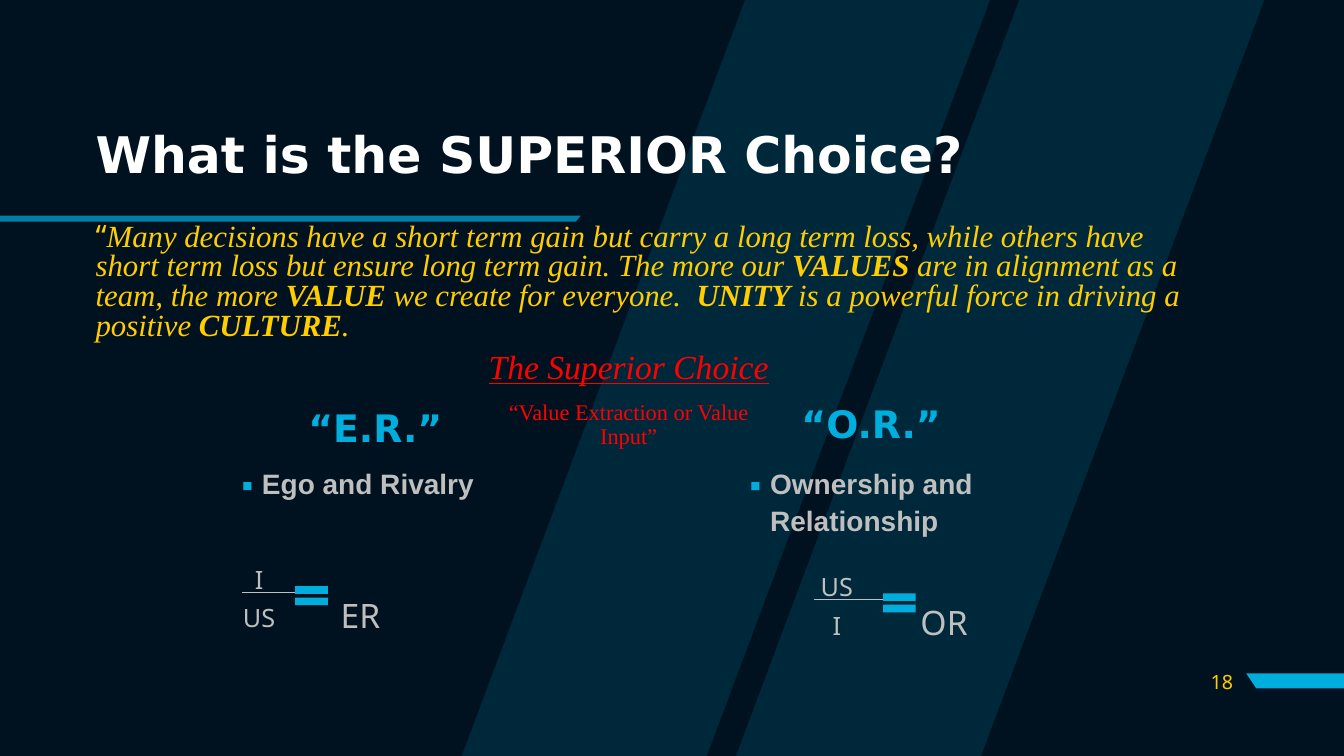
from lxml import etree
from pptx import Presentation
from pptx import util as u
from pptx.dml.color import RGBColor
from pptx.enum import shapes, text
from pptx.oxml.ns import qn

CYAN, GOLD, GREY, RED, WHITE, NAVY = "00AEDE", "FFCD00", "BFBFBF", "FF0000", "FFFFFF", "00111F"
HEAD, BODY, SERIF, SANS = "DejaVu Sans", "Noto Sans", "Times New Roman", "Arial"
LEFT, CENTER, RIGHT = text.PP_ALIGN.LEFT, text.PP_ALIGN.CENTER, text.PP_ALIGN.RIGHT


def rgb(color):
    return RGBColor.from_string(color)


def paint(sp, color, alpha=100):
    sp.shadow.inherit = False
    sp.line.fill.background()
    sp.fill.solid()
    sp.fill.fore_color.rgb = rgb(color)
    if alpha < 100:
        clr = sp.fill._xPr.find(".//" + qn("a:srgbClr"))
        etree.SubElement(clr, qn("a:alpha"), val=str(alpha * 1000))


def add_outline(slide, polygons, color, alpha=100):
    """Draw one freeform made of closed polygons, points in inches."""
    outlines = [[(u.Inches(x), u.Inches(y)) for x, y in points] for points in polygons]
    builder = slide.shapes.build_freeform(*outlines[0][0])
    for i, points in enumerate(outlines):
        if i:
            builder.move_to(*points[0])
        builder.add_line_segments(points[1:], close=True)
    paint(builder.convert_to_shape(), color, alpha)


def add_bullet(p, char, color, indent):
    pPr = p._p.get_or_add_pPr()
    pPr.set("marL", str(u.Inches(indent)))
    pPr.set("indent", str(-u.Inches(indent)))
    clr = etree.SubElement(pPr, qn("a:buClr"))
    etree.SubElement(clr, qn("a:srgbClr"), val=color)
    etree.SubElement(pPr, qn("a:buFont"), typeface=BODY)
    etree.SubElement(pPr, qn("a:buChar"), char=char)


def add_run(p, words, size, font, color, bold=False, italic=False, underline=False):
    r = p.add_run()
    r.text = words
    f = r.font
    f.size, f.name, f.bold, f.italic, f.underline = u.Pt(size), font, bold, italic, underline
    f.color.rgb = rgb(color)


def add_text(slide, box, paragraphs, align=LEFT, spacing=1.0, before=0, middle=False,
             bullet=None, inset=True, **base):
    """Each paragraph is a list of (words, format changes) runs."""
    tf = slide.shapes.add_textbox(*map(u.Inches, box)).text_frame
    tf.word_wrap = True
    if middle:
        tf.vertical_anchor = text.MSO_ANCHOR.MIDDLE
    if not inset:
        tf.margin_left = tf.margin_right = tf.margin_top = tf.margin_bottom = 0
    for i, runs in enumerate(paragraphs):
        p = tf.add_paragraph() if i else tf.paragraphs[0]
        if bullet:
            add_bullet(p, bullet, CYAN, 0.2)
        p.alignment, p.line_spacing = align, spacing
        if i:
            p.space_before = u.Pt(before)
        for words, changes in runs:
            add_run(p, words, **{**base, **changes})


def add_backdrop(slide):
    slide.background.fill.solid()
    slide.background.fill.fore_color.rgb = rgb(NAVY)
    # Two slanted stripes
    width, slant = 2.43, 2.81
    add_outline(slide, [[(x + slant, 0), (x, 7.5), (x + width, 7.5), (x + width + slant, 0)]
                        for x in (7.3, 4.58)], CYAN, 15)
    # Page number tab and title rule
    add_outline(slide, [[(13.34, 6.68), (13.34, 6.83), (12.46, 6.83), (12.36, 6.68)]], CYAN)
    add_outline(slide, [[(0, 2.14), (0, 2.2), (5.71, 2.2), (5.76, 2.14)]], CYAN, 70)


def add_quote(slide, box):
    strong = {"bold": True}
    add_text(slide, box, [[
        ("“", {"font": BODY, "italic": False}),
        ("Many decisions have a short term gain but carry a long term loss, while others have "
         "short term loss but ensure long term gain. The more our ", {}),
        ("VALUES", strong), (" are in alignment as a team, the more ", {}),
        ("VALUE", strong), (" we create for everyone.  ", {}),
        ("UNITY", strong), (" is a powerful force in driving a positive ", {}),
        ("CULTURE", strong), (".", {}),
    ]], spacing=0.8, size=22, font=SERIF, color=GOLD, italic=True)


def add_choice(slide, heading_box, heading, point_box, point):
    add_text(slide, heading_box, [[(heading, {})]], spacing=0.9,
             size=27, font=HEAD, color=CYAN, bold=True)
    add_text(slide, point_box, [[(point, {})]], spacing=1.1, bullet="▪",
             size=20, font=SANS, color=GREY, bold=True)


def add_fraction(slide, x, y, over, under, result, bar, centre, equal_dx, result_dx):
    """Fraction, equal sign and result; x, y is the left end of the bar."""
    style = {"font": BODY, "color": GREY, "inset": False}
    for words, dy in ((over, -0.28), (under, 0.1)):
        add_text(slide, (x + centre - 0.25, y + dy, 0.5, 0.34), [[(words, {})]],
                 align=CENTER, size=18, **style)
    add_text(slide, (x + result_dx, y + 0.02, 0.7, 0.45), [[(result, {})]], size=24, **style)
    line = slide.shapes.add_connector(
        shapes.MSO_CONNECTOR.STRAIGHT, *map(u.Inches, (x, y, x + bar, y)))
    line.line.color.rgb = rgb(GREY)
    line.line.width = u.Pt(1)
    etree.SubElement(line._element.spPr, qn("a:effectLst"))
    sp = slide.shapes.add_shape(shapes.MSO_SHAPE.MATH_EQUAL,
                                *map(u.Inches, (x + equal_dx, y - 0.13, 0.44, 0.32)))
    paint(sp, CYAN)


def main():
    prs = Presentation()
    prs.slide_width, prs.slide_height = u.Inches(13.33), u.Inches(7.5)
    slide = prs.slides.add_slide(prs.slide_layouts[6])
    add_backdrop(slide)

    # Title, quote and page number
    add_text(slide, (0.85, 1.13, 9.64, 0.86), [[("What is the SUPERIOR Choice?", {})]],
             spacing=0.9, middle=True, size=36, font=HEAD, color=WHITE, bold=True)
    add_quote(slide, (0.85, 2.17, 11.18, 1.36))
    add_text(slide, (11.73, 6.56, 0.6, 0.4), [[("18", {})]], align=RIGHT, middle=True,
             size=14, font=BODY, color=GOLD)

    # The two choices and the question between them
    add_choice(slide, (2.96, 4.02, 1.84, 0.5), "“E.R.”",
               (2.3, 4.55, 3.14, 1.01), "Ego and Rivalry")
    add_choice(slide, (7.85, 3.98, 1.72, 0.5), "“O.R.”",
               (7.34, 4.55, 3.14, 1.01), "Ownership and Relationship")
    add_text(slide, (4.71, 3.43, 3.05, 1.21), [
        [("The Superior Choice", {"size": 24, "italic": True, "underline": True})],
        [("“Value Extraction or Value Input”", {})],
    ], align=CENTER, spacing=0.9, before=10, size=16, font=SERIF, color=RED)

    # Formulas
    add_fraction(slide, 2.4, 5.88, "I", "US", "ER", 0.55, 0.17, 0.47, 0.98)
    add_fraction(slide, 8.07, 5.95, "US", "I", "OR", 0.83, 0.23, 0.63, 1.06)

    prs.save("out.pptx")


if __name__ == "__main__":
    main()
